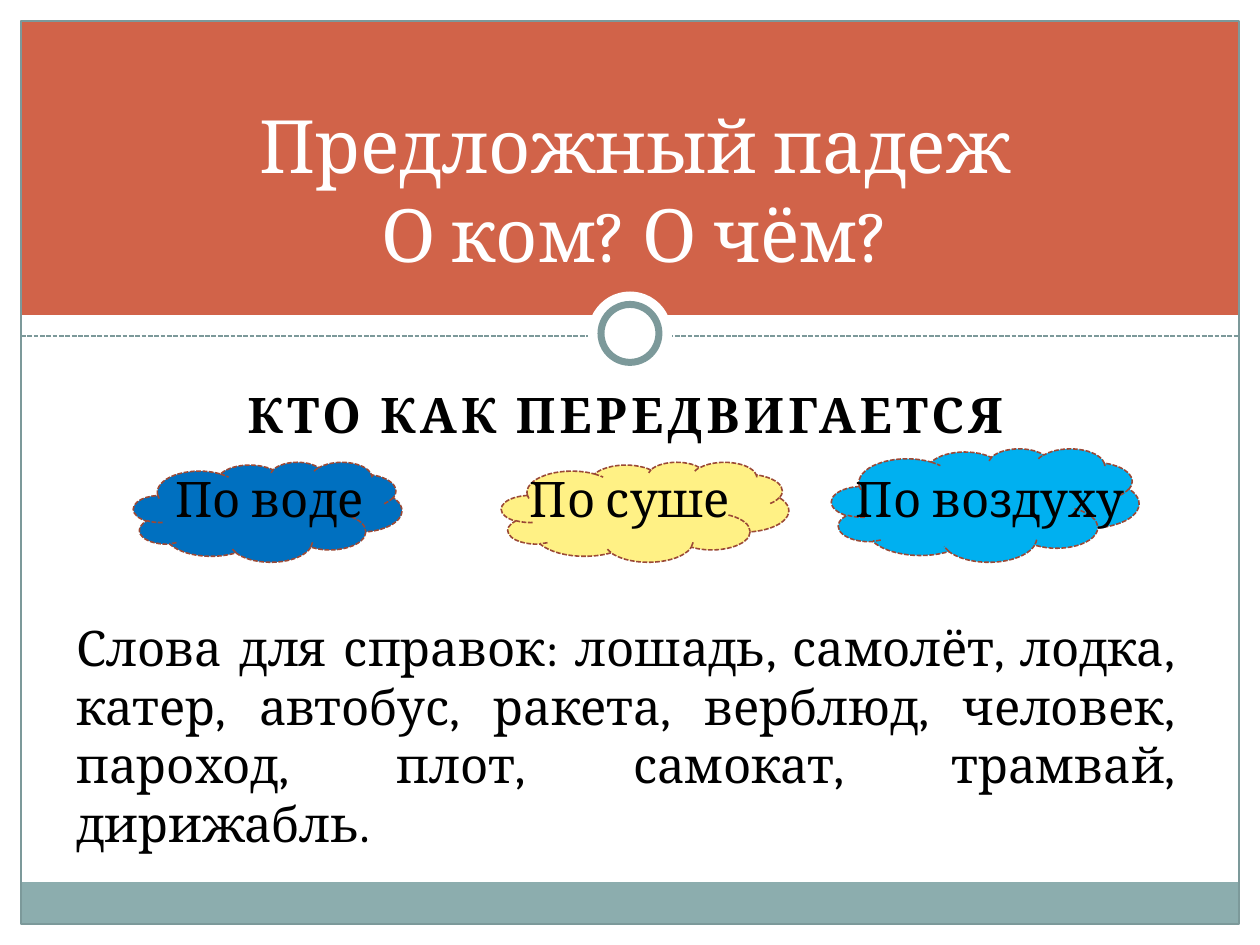
"""Build a slide on the prepositional case with three clouds of travel."""
from pptx import Presentation
from pptx.dml.color import RGBColor
from pptx.enum.dml import MSO_LINE as Dash
from pptx.enum.shapes import MSO_CONNECTOR as Link, MSO_SHAPE as Kind
from pptx.enum.text import MSO_ANCHOR as Anchor, PP_ALIGN as Align
from pptx.oxml.ns import qn
from pptx.util import Pt
from lxml.etree import SubElement

deck = Presentation()
deck.slide_width, deck.slide_height = Pt(720), Pt(540)
unit = deck.slide_width / 60
slide = deck.slides.add_slide(deck.slide_layouts[5])
shapes = slide.shapes
color = RGBColor.from_string


def draw(kind, grid, fill=None, line=None, width=0.9, dash=None):
    shape = shapes.add_shape(kind, *[round(n * unit) for n in grid])
    shape.shadow.inherit = False
    if fill:
        shape.fill.solid()
        shape.fill.fore_color.rgb = color(fill)
    else:
        shape.fill.background()
    if line:
        shape.line.color.rgb = color(line)
        shape.line.width = Pt(width)
        shape.line.dash_style = dash
    else:
        shape.line.fill.background()


def write(text, grid, box=None, size=28, ink="000000", bold=False,
          align=Align.CENTER, anchor=Anchor.TOP, space=0):
    place = [round(n * unit) for n in grid]
    box = box or shapes.add_textbox(*place)
    box.left, box.top, box.width, box.height = place
    frame = box.text_frame
    frame.word_wrap = True
    frame.vertical_anchor = anchor
    para = frame.paragraphs[0]
    para.text = text
    para.alignment = align
    for run in para.runs:
        font = run.font
        font.name, font.size, font.bold = "Cambria", Pt(size), bold
        font.color.rgb = color(ink)
        if space:
            run._r.get_or_add_rPr().set("spc", str(space))


draw(Kind.RECTANGLE, (1, 1, 58, 14), "D16349")
draw(Kind.RECTANGLE, (1, 42, 58, 2), "8CADAE")
draw(Kind.RECTANGLE, (1, 1, 58, 43), line="7C999A", width=0.75)

rule = shapes.add_connector(Link.STRAIGHT, *[round(n * unit) for n in (1, 16, 59, 16)])
rule.line.color.rgb = color("7C999A")
rule.line.width = Pt(0.9)
rule.line.dash_style = Dash.SQUARE_DOT
SubElement(rule._element.spPr, qn("a:effectLst"))

draw(Kind.OVAL, (28, 13.88, 4, 4), "FFFFFF")
draw(Kind.OVAL, (28.62, 14.5, 2.76, 2.76), "FFFFFF", "7C999A", 4)

clouds = [
    ("По воде", "0070C0", (6.36, 22, 12.78, 4.76)),
    ("По суше", "FFF185", (23.88, 22, 13.68, 4.76)),
    ("По воздуху", "00B0F0", (39.6, 21.36, 14.64, 5.4)),
]
for i, (name, fill, grid) in enumerate(clouds):
    draw(Kind.CLOUD, grid, fill, "9B4936", dash=Dash.SQUARE_DOT)
    write(name, (4.34 + i * 17.16, 22, 17, 3.4))

write("КТО КАК ПЕРЕДВИГАЕТСЯ", (0.72, 18, 58.14, 3.06), bold=True, space=250)
title = shapes.title
shapes._spTree.append(title._element)
write("Предложный падеж\nО ком? О чём?", (4.74, 3.48, 51, 10), title,
      size=42, ink="FFFFFF", anchor=Anchor.BOTTOM)
write("Слова для справок: лошадь, самолёт, лодка, катер, автобус, ракета, "
      "верблюд, человек, пароход, плот, самокат, трамвай, дирижабль.",
      (3.06, 29.1, 53.4, 9.06), align=Align.JUSTIFY)

deck.save("out.pptx")
